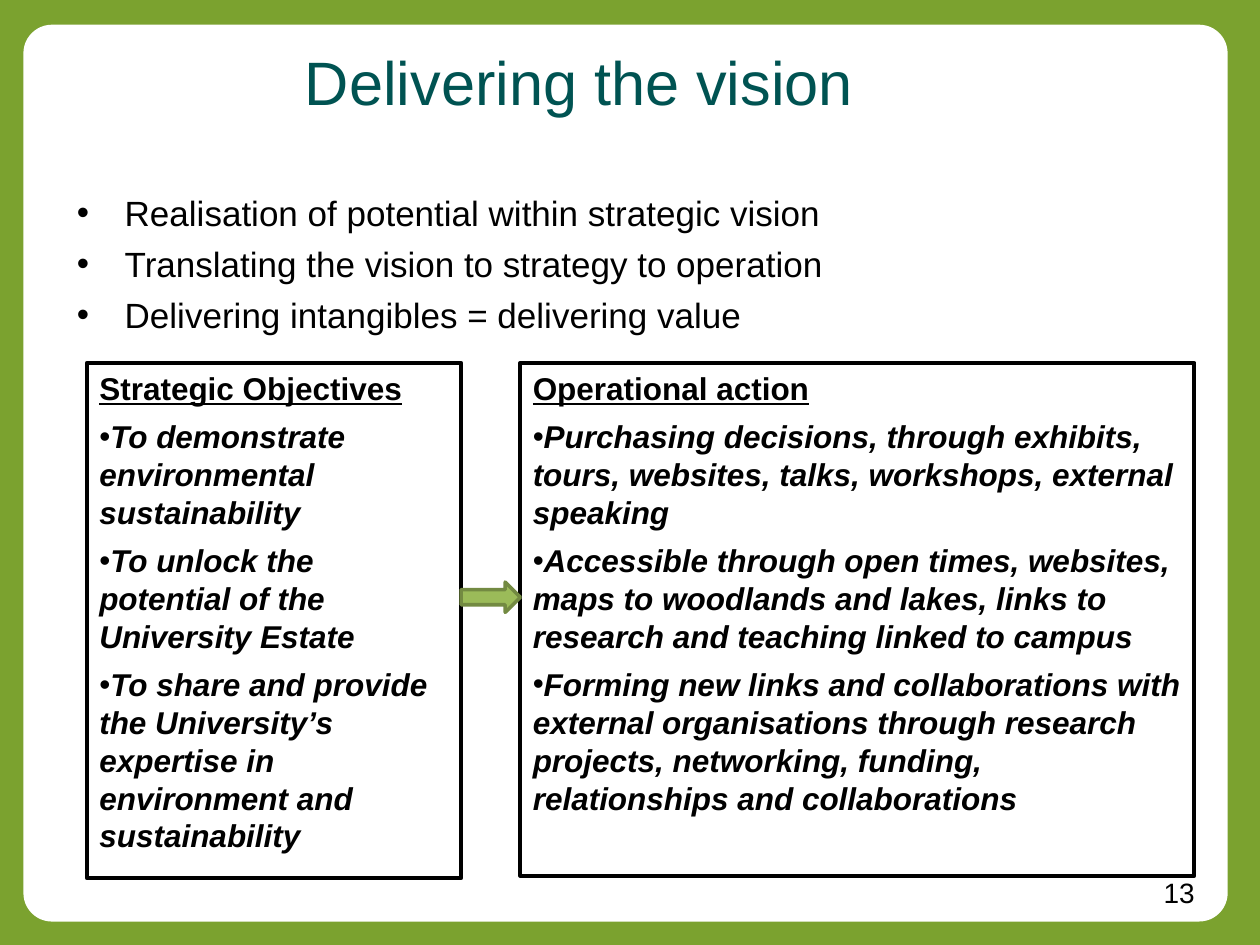
from lxml import etree
from pptx import Presentation
from pptx.dml.color import RGBColor
from pptx.enum.shapes import MSO_SHAPE
from pptx.enum.text import MSO_ANCHOR, PP_ALIGN
from pptx.oxml.ns import qn
from pptx.util import Emu, Pt

PX = 9144  # 100 px to the inch
FONT = "Arial"
LEFT, RIGHT = PP_ALIGN.LEFT, PP_ALIGN.RIGHT
TOP = MSO_ANCHOR.TOP
ROUNDED, RECTANGLE = MSO_SHAPE.ROUNDED_RECTANGLE, MSO_SHAPE.RECTANGLE
RIGHT_ARROW = MSO_SHAPE.RIGHT_ARROW
COLORS = {
    "background": "7BA22F",
    "panel": "FFFFFF",
    "title": "005352",
    "text": "000000",
    "arrow": "9BBB59",
    "arrow edge": "738A42",
}

TITLE = "Delivering the vision"
AIMS = [
    "Realisation of potential within strategic vision",
    "Translating the vision to strategy to operation",
    "Delivering intangibles = delivering value",
]
COLUMNS = [
    ((69, 288, 297, 409), "Strategic Objectives", [
        "To demonstrate environmental sustainability",
        "To unlock the potential of the University Estate",
        "To share and provide the University’s expertise in environment and sustainability",
    ]),
    ((413, 288, 535, 407), "Operational action", [
        "Purchasing decisions, through exhibits, tours, websites, talks, workshops, "
        "external speaking",
        "Accessible through open times, websites, maps to woodlands and lakes, "
        "links to research and teaching linked to campus",
        "Forming new links and collaborations with external organisations through "
        "research projects, networking, funding, relationships and collaborations",
    ]),
]
PAGE_NUMBER = "13"


def color(name):
    return RGBColor.from_string(COLORS[name])


def box(left, top, width, height):
    return [Emu(v * PX) for v in (left, top, width, height)]


def place(shape, *px):
    shape.left, shape.top, shape.width, shape.height = box(*px)


def add_shape(slide, kind, px, fill, line, line_width):
    shape = slide.shapes.add_shape(kind, *box(*px))
    shape.shadow.inherit = False
    if fill:
        shape.fill.solid()
        shape.fill.fore_color.rgb = color(fill)
    else:
        shape.fill.background()
    shape.line.color.rgb = color(line)
    shape.line.width = Pt(line_width)
    return shape


def style(paragraph, size, name="text", align=LEFT, **flags):
    paragraph.alignment = align
    for run in paragraph.runs:
        font = run.font
        font.name, font.size = FONT, Pt(size)
        font.color.rgb = color(name)
        for flag, value in flags.items():
            setattr(font, flag, value)


def add_bullet(paragraph, indent=0):
    """Give the paragraph a round bullet with a hanging indent in px."""
    properties = paragraph._p.get_or_add_pPr()
    properties.set("marL", str(indent * PX))
    properties.set("indent", str(-indent * PX))
    etree.SubElement(properties, qn("a:buFont"), typeface=FONT)
    etree.SubElement(properties, qn("a:buChar"), char="•")


def add_column(slide, px, heading, points):
    frame = add_shape(slide, RECTANGLE, px, None, "text", 2.25).text_frame
    frame.word_wrap = True
    frame.vertical_anchor = TOP
    frame.text = "\n".join([heading, *points])
    for i, paragraph in enumerate(frame.paragraphs):
        paragraph.space_after = Pt(6)
        if i:
            add_bullet(paragraph)
        style(paragraph, 18, bold=True, italic=i > 0, underline=i == 0)


def main():
    deck = Presentation()
    deck.slide_width, deck.slide_height = Emu(1000 * PX), Emu(750 * PX)
    slide = deck.slides.add_slide(deck.slide_layouts[1])
    slide.background.fill.solid()
    slide.background.fill.fore_color.rgb = color("background")

    panel = add_shape(slide, ROUNDED, (20, 21, 953, 709), "panel", "panel", 2)
    panel.adjustments[0] = 0.03
    slide.shapes._spTree.insert(2, panel._element)  # behind the placeholders

    title, body = slide.placeholders
    place(title, 232, 30, 497, 101)
    title.text_frame.text = TITLE
    title.text_frame.vertical_anchor = TOP
    style(title.text_frame.paragraphs[0], 35, "title")

    place(body, 51, 147, 898, 543)
    body.text_frame.text = "\n".join(AIMS)
    for i, paragraph in enumerate(body.text_frame.paragraphs):
        paragraph.space_before = Pt(5 if i else 0)
        add_bullet(paragraph, 38)
        style(paragraph, 20)

    for column in COLUMNS:
        add_column(slide, *column)
    add_shape(slide, RIGHT_ARROW, (366, 462, 47, 24), "arrow", "arrow edge", 2)

    number = slide.shapes.add_textbox(*box(730, 690, 228, 37)).text_frame
    number.word_wrap = True
    number.text = PAGE_NUMBER
    style(number.paragraphs[0], 16, align=RIGHT)

    deck.save("out.pptx")


if __name__ == "__main__":
    main()
